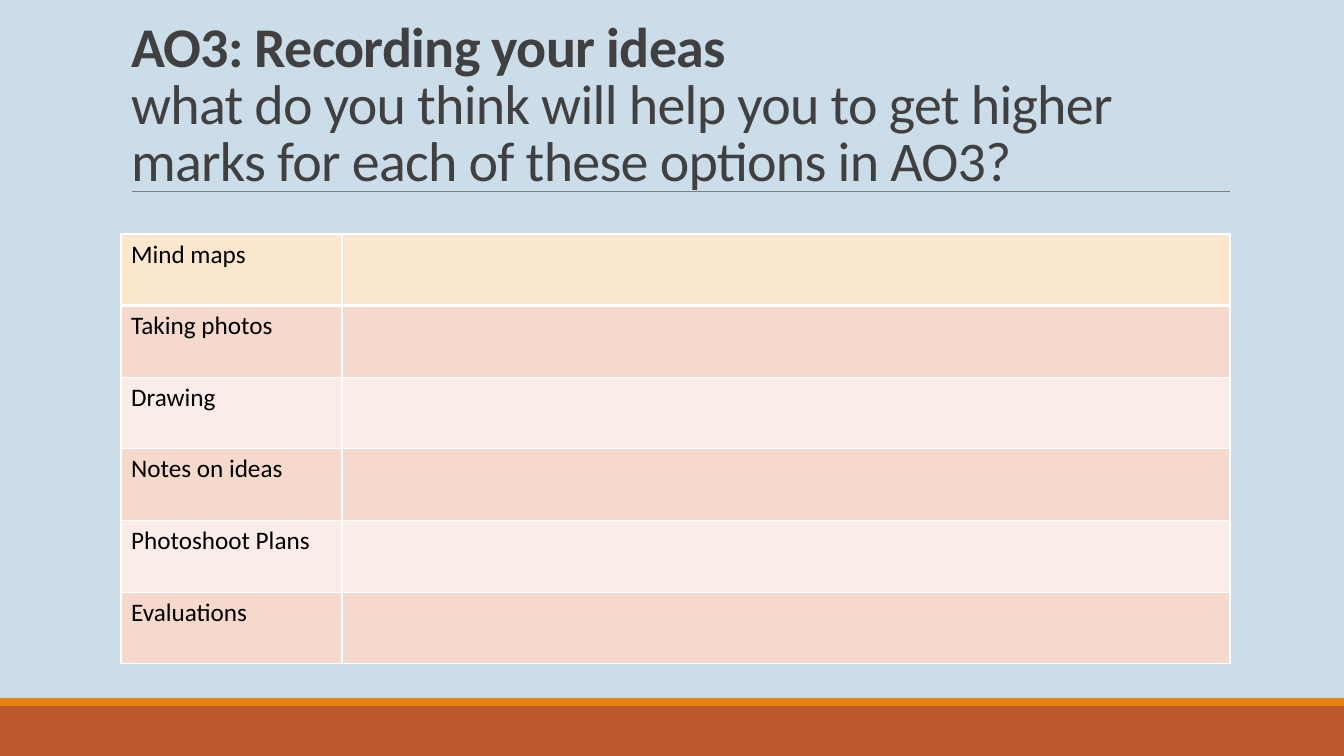
from dataclasses import dataclass

from lxml import etree
from pptx import Presentation
from pptx import util as u
from pptx.dml.color import RGBColor
from pptx.enum import shapes, text
from pptx.oxml import ns

HEADING = "AO3: Recording your ideas"
QUESTION = "what do you think will help you to get higher marks for each of these options in AO3?"
OPTIONS = ["Mind maps", "Taking photos", "Drawing", "Notes on ideas", "Photoshoot Plans", "Evaluations"]

PAGE_SIZE = (1344, 756)
TITLE_BOX = (121, 38, 1109, 160)
RULE = (132, 191, 1230, 191)
TABLE_BOX = (121, 234, 1109, 430)
COLUMNS = (221, 888)


@dataclass(frozen=True)
class Theme:
    font: str = "Calibri"
    background: str = "CCDDEA"
    footer: str = "BD582C"
    stripe: str = "E48312"
    rule: str = "808080"
    title: str = "404040"
    body: str = "000000"
    border: str = "FFFFFF"
    first_row: str = "FBE6CE"
    bands: tuple = ("FAEDE7", "F5D9CC")
    title_size: int = 40
    body_size: int = 18


THEME = Theme()
BANDS = [((0, 706, 1344, 50), THEME.footer), ((0, 698, 1344, 8), THEME.stripe)]


def px(length):
    return u.Emu(round(length * 914400 / 100.8))


def paint(fill, color):
    fill.solid()
    fill.fore_color.rgb = RGBColor.from_string(color)


def add_span(para, words, size, color, bold=False):
    span = para.add_run()
    span.text = words
    span.font.name = THEME.font
    span.font.size = u.Pt(size)
    span.font.bold = bold
    span.font.color.rgb = RGBColor.from_string(color)
    return span


def add_band(page, place, color):
    band = page.shapes.add_shape(shapes.MSO_SHAPE.RECTANGLE, *map(px, place))
    band.shadow.inherit = False
    paint(band.fill, color)
    band.line.fill.background()


def add_rule(page):
    rule = page.shapes.add_connector(shapes.MSO_CONNECTOR.STRAIGHT, *map(px, RULE))
    rule.line.color.rgb = RGBColor.from_string(THEME.rule)
    rule.line.width = u.Pt(0.5)
    etree.SubElement(rule._element.spPr, ns.qn("a:effectLst"))


def write_title(page):
    box = page.shapes.title
    box.left, box.top, box.width, box.height = map(px, TITLE_BOX)
    frame = box.text_frame
    frame.word_wrap = True
    frame.auto_size = text.MSO_AUTO_SIZE.NONE
    frame.vertical_anchor = text.MSO_ANCHOR.BOTTOM
    para = frame.paragraphs[0]
    para.alignment = text.PP_ALIGN.LEFT
    para.line_spacing = 0.85
    heading = add_span(para, HEADING, THEME.title_size, THEME.title, bold=True)
    para.add_line_break()
    question = add_span(para, QUESTION, THEME.title_size, THEME.title)
    for span in (heading, question):
        span.font._element.set("spc", "-50")


def set_borders(cell, widths):
    """Draw left, right, top and bottom borders, with widths in points."""
    props = cell._tc.get_or_add_tcPr()
    for index, (side, width) in enumerate(zip("LRTB", widths)):
        line = etree.Element(ns.qn(f"a:ln{side}"), w=str(u.Pt(width)))
        fill = etree.SubElement(line, ns.qn("a:solidFill"))
        etree.SubElement(fill, ns.qn("a:srgbClr"), val=THEME.border)
        props.insert(index, line)


def add_options(page):
    left, top, width, height = TABLE_BOX
    count = len(OPTIONS)
    table = page.shapes.add_table(count, len(COLUMNS), *map(px, TABLE_BOX)).table
    for column, column_width in zip(table.columns, COLUMNS):
        column.width = px(column_width)
    for index, option in enumerate(OPTIONS):
        table.rows[index].height = px(height / count)
        color = THEME.bands[index % 2] if index else THEME.first_row
        above, below = 3 if index == 1 else 1, 3 if index == 0 else 1
        for cell in table.rows[index].cells:
            paint(cell.fill, color)
            set_borders(cell, (1, 1, above, below))
        add_span(table.cell(index, 0).text_frame.paragraphs[0], option, THEME.body_size, THEME.body)


def main():
    deck = Presentation()
    deck.slide_width, deck.slide_height = map(px, PAGE_SIZE)
    page = deck.slides.add_slide(deck.slide_layouts.get_by_name("Title Only"))
    paint(page.background.fill, THEME.background)
    for place, color in BANDS:
        add_band(page, place, color)
    add_rule(page)
    write_title(page)
    add_options(page)
    deck.save("out.pptx")


if __name__ == "__main__":
    main()
